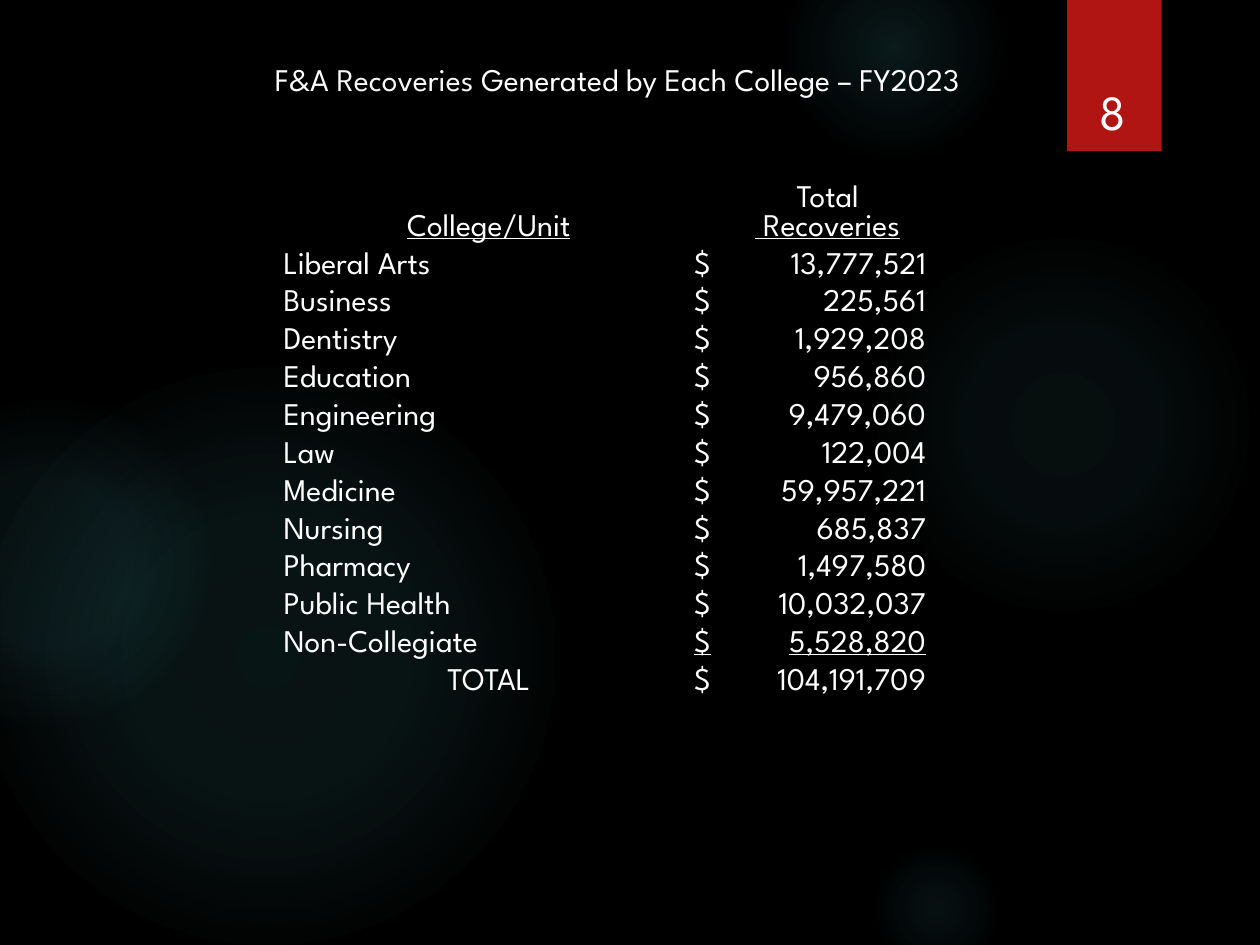
import pptx
import pptx.dml.color
import pptx.enum.shapes
import pptx.enum.text
import pptx.oxml
import pptx.oxml.ns
import pptx.util

RGB = pptx.dml.color.RGBColor
ALIGN = pptx.enum.text.PP_ALIGN
ANCHOR = pptx.enum.text.MSO_ANCHOR
SHAPE = pptx.enum.shapes.MSO_SHAPE

BLACK = RGB(0x00, 0x00, 0x00)
WHITE = RGB(0xFF, 0xFF, 0xFF)
OFF_WHITE = RGB(0xF7, 0xF7, 0xF7)
RED = RGB(0xB0, 0x15, 0x13)
TEAL = RGB(0x50, 0xB9, 0xC1)

FONT = "League Spartan"
COLUMNS, ROWS = 100, 75
NO_GRID_STYLE = "{2D5ABB26-0587-4C30-8999-92F81FD0307C}"
NS = pptx.oxml.ns.nsdecls("a")

GLOWS = [
    (68.9, 18.3, 30.8, [(0, 7), (36, 6), (69, 0)]),
    (62.2, -5, 17.5, [(0, 14), (36, 7), (73, 0)]),
    (68.9, 66.7, 10.8, [(0, 9), (36, 5), (66, 0)]),
    (-1.7, 29.2, 45.8, [(0, 11), (36, 10), (75, 0)]),
    (-9.2, 31.7, 25.8, [(0, 8), (36, 8), (72, 0)]),
]

RECOVERIES = [
    ("Liberal Arts", "13,777,521"),
    ("Business", "225,561"),
    ("Dentistry", "1,929,208"),
    ("Education", "956,860"),
    ("Engineering", "9,479,060"),
    ("Law", "122,004"),
    ("Medicine", "59,957,221"),
    ("Nursing", "685,837"),
    ("Pharmacy", "1,497,580"),
    ("Public Health", "10,032,037"),
    ("Non-Collegiate", "5,528,820"),
    ("TOTAL", "104,191,709"),
]


class SlideBuilder:
    def __init__(self, prs):
        self.cell_w = prs.slide_width / COLUMNS
        self.cell_h = prs.slide_height / ROWS
        self.s = prs.slides.add_slide(prs.slide_layouts[5])
        self.s.background.fill.solid()
        self.s.background.fill.fore_color.rgb = BLACK

    def x(self, columns):
        return round(columns * self.cell_w)

    def y(self, rows):
        return round(rows * self.cell_h)

    def box(self, left, top, width, height):
        return self.x(left), self.y(top), self.x(width), self.y(height)

    def style(self, r, size=18, color=WHITE, underline=False):
        r.font.name = FONT
        r.font.size = pptx.util.Pt(size)
        r.font.color.rgb = color
        r.font.underline = underline

    def shape(self, kind, *box):
        sp = self.s.shapes.add_shape(kind, *self.box(*box))
        sp.shadow.inherit = False
        sp.line.fill.background()
        return sp

    def glow(self, left, top, size, stops):
        sp = self.shape(SHAPE.OVAL, left, top, size, size)
        marks = "".join(
            f'<a:gs pos="{pos * 1000}"><a:srgbClr val="{TEAL}">'
            f'<a:alpha val="{alpha * 1000}"/></a:srgbClr></a:gs>'
            for pos, alpha in stops
        )
        geometry = sp.element.spPr.find(pptx.oxml.ns.qn("a:prstGeom"))
        geometry.addnext(pptx.oxml.parse_xml(
            f'<a:gradFill {NS}><a:gsLst>{marks}</a:gsLst><a:path path="circle">'
            '<a:fillToRect l="50000" t="50000" r="50000" b="50000"/>'
            '</a:path></a:gradFill>'))

    def ribbon(self, *box):
        sp = self.shape(SHAPE.RECTANGLE, *box)
        sp.fill.solid()
        sp.fill.fore_color.rgb = RED
        effects = sp.element.spPr.find(pptx.oxml.ns.qn("a:effectLst"))
        effects.append(pptx.oxml.parse_xml(
            f'<a:outerShdw {NS} blurRad="{pptx.util.Pt(3)}" '
            f'dist="{pptx.util.Pt(2)}" dir="5400000"><a:srgbClr val="{BLACK}">'
            '<a:alpha val="45000"/></a:srgbClr></a:outerShdw>'))

    def text(self, text, size, *box):
        sp = self.s.shapes.add_textbox(*self.box(*box))
        tf = sp.text_frame
        tf.word_wrap = True
        tf.vertical_anchor = ANCHOR.BOTTOM
        p = tf.paragraphs[0]
        p.text = text
        p.alignment = ALIGN.CENTER
        self.style(p.runs[0], size)

    def title(self, parts, *box):
        sp = self.s.shapes.title
        sp.left, sp.top, sp.width, sp.height = self.box(*box)
        sp.element.getparent().append(sp.element)
        tf = sp.text_frame
        tf.word_wrap = True
        tf.auto_size = pptx.enum.text.MSO_AUTO_SIZE.NONE
        tf.vertical_anchor = ANCHOR.BOTTOM
        p = tf.paragraphs[0]
        p.alignment = ALIGN.CENTER
        for text, color in parts:
            r = p.add_run()
            r.text = text
            self.style(r, color=color)

    def table(self, rows, left, top, widths, heights):
        frame = self.s.shapes.add_table(
            len(rows), len(widths), *self.box(left, top, sum(widths), sum(heights)))
        table = frame.table
        table.first_row = table.horz_banding = False
        table._tbl.tblPr.find(pptx.oxml.ns.qn("a:tableStyleId")).text = NO_GRID_STYLE
        for column, width in zip(table.columns, widths):
            column.width = self.x(width)
        for row, height, values in zip(table.rows, heights, rows):
            row.height = self.y(height)
            for cell, value in zip(row.cells, values):
                self.cell(cell, *value)

    def cell(self, cell, text, align=ALIGN.LEFT, underlined=(False,), tab=None):
        cell.fill.background()
        cell.margin_left = cell.margin_right = cell.margin_top = cell.margin_bottom = 0
        cell.vertical_anchor = ANCHOR.BOTTOM
        cell.text_frame.text = text
        for p, underline in zip(cell.text_frame.paragraphs, underlined):
            p.alignment = align
            self.style(p.runs[0], underline=underline)
            if tab:
                p._p.get_or_add_pPr().append(pptx.oxml.parse_xml(
                    f'<a:tabLst {NS}><a:tab pos="{self.x(tab)}" algn="r"/></a:tabLst>'))


def main():
    prs = pptx.Presentation()
    prs.slide_width = pptx.util.Inches(10)
    prs.slide_height = pptx.util.Inches(7.5)
    slide = SlideBuilder(prs)

    for glow in GLOWS:
        slide.glow(*glow)
    slide.ribbon(84.7, 0, 7.5, 12)
    slide.text("8", 28, 84.9, 3.2, 6.9, 8.4)

    rows = [(("College/Unit", ALIGN.CENTER, (True,)),
             ("Total\n Recoveries", ALIGN.CENTER, (False, True)))]
    for unit, amount in RECOVERIES:
        align = ALIGN.CENTER if unit == "TOTAL" else ALIGN.LEFT
        last_addend = unit == "Non-Collegiate"
        rows.append(((unit, align),
                     (f"$\t{amount}", ALIGN.LEFT, (last_addend,), 18.4)))
    slide.table(rows, 22.5, 13.3, (32.6, 21.2), [6] + [3] * len(RECOVERIES))

    slide.title([("F&A ", WHITE), ("Recoveries", OFF_WHITE),
                 (" Generated by Each College – FY2023", WHITE)],
                8.6, 4.3, 80.8, 4)
    prs.save("out.pptx")


if __name__ == "__main__":
    main()
